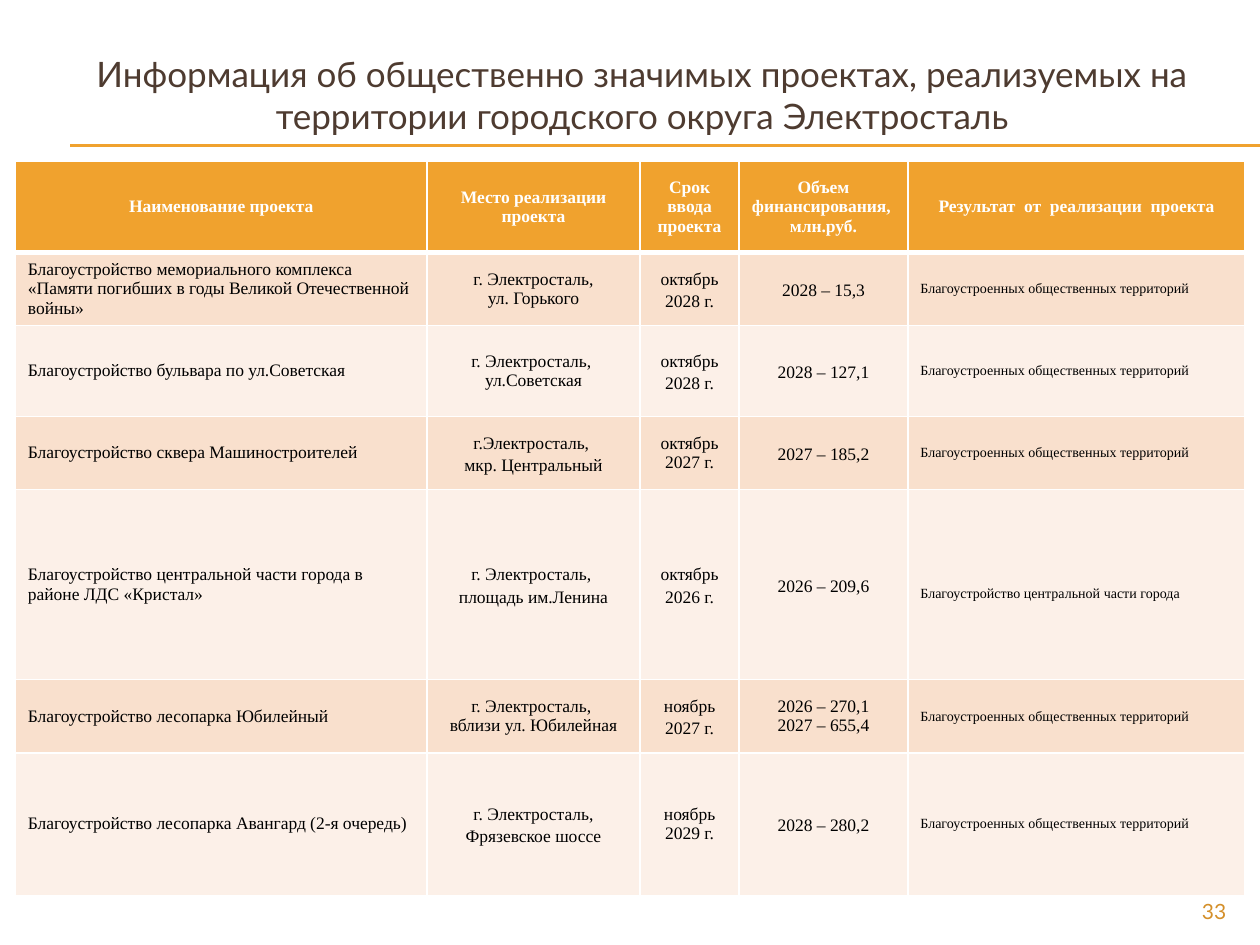
import pptx
import pptx.util
import pptx.dml.color
import pptx.enum.shapes
import pptx.enum.text
import pptx.oxml
import pptx.oxml.ns
import lxml.etree

Pt = pptx.util.Pt
ALIGN = pptx.enum.text.PP_ALIGN
MIDDLE = pptx.enum.text.MSO_ANCHOR.MIDDLE
COLORS = {"accent": "F0A22E", "title": "4E3B30", "number": "D48F29", "white": "FFFFFF",
          "black": "000000", "band_dark": "F9E0CD", "band_light": "FCF0E8"}


def add_text(paragraph, text, size, font, color, bold=False):
    run = paragraph.add_run()
    run.text = text
    run.font.size = Pt(size)
    run.font.name = font
    run.font.bold = bold
    run.font.color.rgb = pptx.dml.color.RGBColor.from_string(COLORS[color])


def set_borders(cell, top, bottom):
    """Give the cell white borders; top and bottom are widths in points."""
    properties = cell._tc.get_or_add_tcPr()
    widths = {"lnL": 1, "lnR": 1, "lnT": top, "lnB": bottom}
    for position, (side, width) in enumerate(widths.items()):
        properties.insert(position, pptx.oxml.parse_xml(
            f'<a:{side} {pptx.oxml.ns.nsdecls("a")} w="{Pt(width)}"><a:solidFill>'
            f'<a:srgbClr val="{COLORS["white"]}"/></a:solidFill></a:{side}>'))


presentation = pptx.Presentation()
presentation.slide_width = Pt(720)
presentation.slide_height = Pt(540)
slide = presentation.slides.add_slide(presentation.slide_layouts[5])

for y in (82.8, 83.5):
    rule = slide.shapes.add_connector(
        pptx.enum.shapes.MSO_CONNECTOR.STRAIGHT, Pt(40.3), Pt(y), Pt(720), Pt(y))
    rule.line.color.rgb = pptx.dml.color.RGBColor.from_string(COLORS["accent"])
    rule.line.width = Pt(0.75)
    lxml.etree.SubElement(rule._element.spPr, pptx.oxml.ns.qn("a:effectLst"))

title = slide.shapes.title
title.left, title.top, title.width, title.height = Pt(25), Pt(21), Pt(684), Pt(66)
title.text_frame.auto_size = pptx.enum.text.MSO_AUTO_SIZE.NONE
title.text_frame.word_wrap = True
title.text_frame.vertical_anchor = MIDDLE
title.text_frame.paragraphs[0].alignment = ALIGN.CENTER
add_text(title.text_frame.paragraphs[0],
         "Информация об общественно значимых проектах, реализуемых на "
         "территории городского округа Электросталь", 20, "Lato", "title")

# A cell is a list of paragraphs, or a pair of that list and its line spacing.
territories = ["Благоустроенных общественных территорий"]
rows = [
    [["Наименование проекта"], ["Место реализации проекта"], ["Срок ввода проекта"],
     ["Объем финансирования, ", "млн.руб."], ["Результат  от  реализации  проекта"]],
    [["Благоустройство мемориального комплекса «Памяти погибших в годы "
      "Великой Отечественной войны»"],
     ["г. Электросталь,", "ул. Горького"], (["октябрь 2028 г."], 1.15),
     (["2028 – 15,3"], 1.15), territories],
    [["Благоустройство бульвара по ул.Советская"],
     ["г. Электросталь, ", "ул.Советская"], (["октябрь 2028 г."], 1.15),
     (["2028 – 127,1"], 1.15), territories],
    [["Благоустройство сквера Машиностроителей"],
     (["г.Электросталь, ", "мкр. Центральный"], 1.15), ["октябрь 2027 г."],
     (["2027 – 185,2"], 1.15), territories],
    [["Благоустройство центральной части города в районе ЛДС «Кристал»"],
     (["г. Электросталь, ", "площадь им.Ленина"], 1.15), (["октябрь", "2026 г."], 1.15),
     (["2026 – 209,6"], 1.15), ["Благоустройство центральной части города"]],
    [["Благоустройство лесопарка Юбилейный"],
     ["г. Электросталь, ", "вблизи ул. Юбилейная"], (["ноябрь 2027 г."], 1.15),
     ["2026 – 270,1", "2027 – 655,4"], territories],
    [["Благоустройство лесопарка Авангард (2-я очередь)"],
     (["г. Электросталь, Фрязевское шоссе"], 1.15), ["ноябрь 2029 г."],
     (["2028 – 280,2"], 1.15), territories],
]
column_widths = [235.2, 121.7, 56.7, 96.4, 192.7]
row_heights = [52, 41.8, 52, 41.8, 108.7, 41.8, 81.4]
table = slide.shapes.add_table(len(rows), len(column_widths), Pt(8.8), Pt(92.2),
                               Pt(sum(column_widths)), Pt(sum(row_heights))).table
for column, width in zip(table.columns, column_widths):
    column.width = Pt(width)
for row, height in zip(table.rows, row_heights):
    row.height = Pt(height)

last_column = len(column_widths) - 1
for row_index, row in enumerate(rows):
    header = row_index == 0
    fill = "accent" if header else "band_dark" if row_index % 2 else "band_light"
    for column_index, content in enumerate(row):
        lines, spacing = content if isinstance(content, tuple) else (content, 1.0)
        cell = table.cell(row_index, column_index)
        cell.fill.solid()
        cell.fill.fore_color.rgb = pptx.dml.color.RGBColor.from_string(COLORS[fill])
        set_borders(cell, top=3 if row_index == 1 else 1, bottom=3 if header else 1)
        cell.vertical_anchor = MIDDLE
        cell.margin_top = cell.margin_bottom = Pt(0)
        centered = header or 0 < column_index < last_column
        size = 8 if column_index == last_column and not header else 10
        for line_index, line in enumerate(lines):
            frame = cell.text_frame
            paragraph = frame.add_paragraph() if line_index else frame.paragraphs[0]
            paragraph.alignment = ALIGN.CENTER if centered else ALIGN.LEFT
            paragraph.line_spacing = spacing
            add_text(paragraph, line, size, "Times New Roman",
                     "white" if header else "black", header)
table.cell(4, last_column).margin_top = Pt(10)

number_box = slide.shapes.add_textbox(Pt(648), Pt(509.8), Pt(59.8), Pt(19.4))
number_box.text_frame.word_wrap = True
number_box.text_frame.paragraphs[0].alignment = ALIGN.RIGHT
add_text(number_box.text_frame.paragraphs[0], "33", 12, "Lato", "number")

presentation.save("out.pptx")
